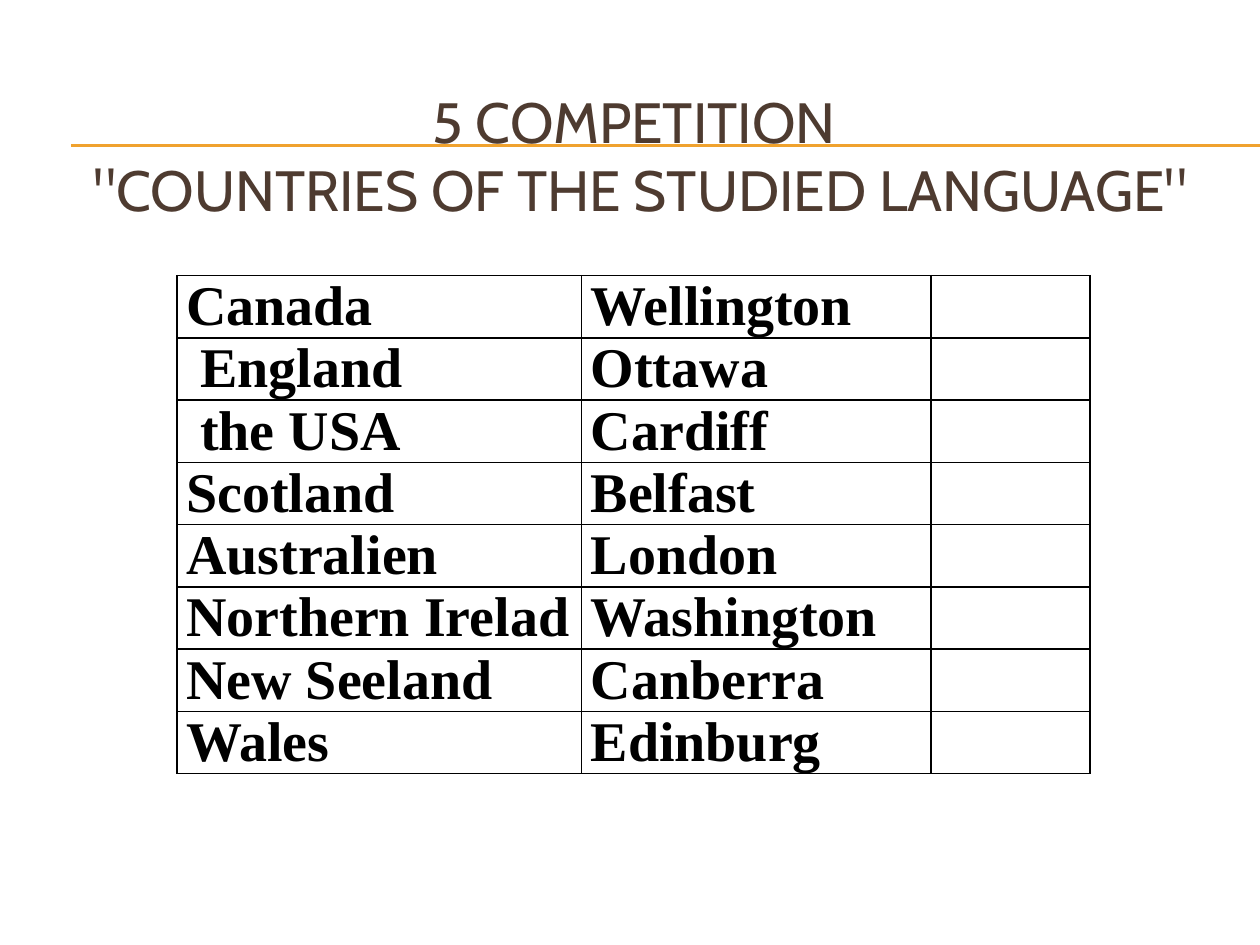
import pptx
import pptx.dml.color
import pptx.enum.shapes
import pptx.enum.text
import pptx.oxml.xmlchemy
import pptx.util
from dataclasses import dataclass

Pt = pptx.util.Pt
RGB = pptx.dml.color.RGBColor.from_string
Align = pptx.enum.text.PP_ALIGN
OxmlElement = pptx.oxml.xmlchemy.OxmlElement


@dataclass(frozen=True)
class Theme:
    title_font: str = "Cabin"
    title_size: float = 32.4
    title_color: str = "4E3B30"
    table_font: str = "Times New Roman"
    table_size: float = 32
    table_color: str = "000000"
    rule_color: str = "F0A22E"
    rule_width: float = 0.75
    border_width: float = 1


THEME = Theme()

TITLE = '5 COMPETITION \v"COUNTRIES OF THE STUDIED LANGUAGE"'
ROWS = [
    ("Canada", "Wellington"),
    (" England", "Ottawa"),
    (" the USA", "Cardiff"),
    ("Scotland", "Belfast"),
    ("Australien", "London"),
    ("Northern Irelad", "Washington"),
    ("New Seeland", "Canberra"),
    ("Wales", "Edinburg"),
]
COLUMN_WIDTHS = (231.2, 199.6, 90.8)
ROW_HEIGHT = 35.5
HANGING_INDENT = 27


def style_runs(p, font, size, color, bold):
    for r in p.runs:
        r.font.name = font
        r.font.size = Pt(size)
        r.font.bold = bold
        r.font.color.rgb = RGB(color)


def add_rule(slide, y):
    line = slide.shapes.add_connector(
        pptx.enum.shapes.MSO_CONNECTOR.STRAIGHT, Pt(40.5), Pt(y), Pt(720), Pt(y))
    line.line.color.rgb = RGB(THEME.rule_color)
    line.line.width = Pt(THEME.rule_width)
    line._element.spPr.append(OxmlElement("a:effectLst"))


def set_title(slide):
    sp = slide.shapes.title
    sp.left, sp.top, sp.width, sp.height = Pt(24), Pt(36), Pt(684), Pt(66)
    tf = sp.text_frame
    tf.text = TITLE
    tf.word_wrap = True
    tf.auto_size = pptx.enum.text.MSO_AUTO_SIZE.NONE
    tf.vertical_anchor = pptx.enum.text.MSO_ANCHOR.MIDDLE
    tf.margin_top = Pt(42.5)
    p = tf.paragraphs[0]
    p.alignment = Align.CENTER
    style_runs(p, THEME.title_font, THEME.title_size, THEME.title_color, False)


def set_borders(cell):
    tc_pr = cell._tc.get_or_add_tcPr()
    for index, side in enumerate(("a:lnL", "a:lnR", "a:lnT", "a:lnB")):
        ln = OxmlElement(side)
        ln.set("w", str(Pt(THEME.border_width)))
        fill = OxmlElement("a:solidFill")
        color = OxmlElement("a:srgbClr")
        color.set("val", THEME.table_color)
        fill.append(color)
        ln.append(fill)
        tc_pr.insert(index, ln)


def format_cell(cell, text):
    cell.fill.background()
    set_borders(cell)
    cell.margin_left = cell.margin_right = Pt(5.2)
    cell.margin_top = cell.margin_bottom = 0
    if not text:
        return
    cell.text_frame.text = text
    p = cell.text_frame.paragraphs[0]
    p.alignment = Align.JUSTIFY
    p_pr = p._p.get_or_add_pPr()
    p_pr.set("marL", str(Pt(HANGING_INDENT)))
    p_pr.set("indent", str(-Pt(HANGING_INDENT)))
    style_runs(p, THEME.table_font, THEME.table_size, THEME.table_color, True)


def add_capitals_table(slide):
    table = slide.shapes.add_table(
        len(ROWS), len(COLUMN_WIDTHS), Pt(101.2), Pt(157.5),
        Pt(sum(COLUMN_WIDTHS)), Pt(ROW_HEIGHT * len(ROWS))).table
    table.first_row = table.horz_banding = False
    for column, width in zip(table.columns, COLUMN_WIDTHS):
        column.width = Pt(width)
    for row, (country, capital) in zip(table.rows, ROWS):
        row.height = Pt(ROW_HEIGHT)
        for cell, text in zip(row.cells, (country, capital, "")):
            format_cell(cell, text)


def main():
    prs = pptx.Presentation()
    prs.slide_width, prs.slide_height = Pt(720), Pt(540)
    slide = prs.slides.add_slide(prs.slide_layouts[5])
    for y in (82.8, 83.5):
        add_rule(slide, y)
    set_title(slide)
    add_capitals_table(slide)
    prs.save("out.pptx")


if __name__ == "__main__":
    main()
